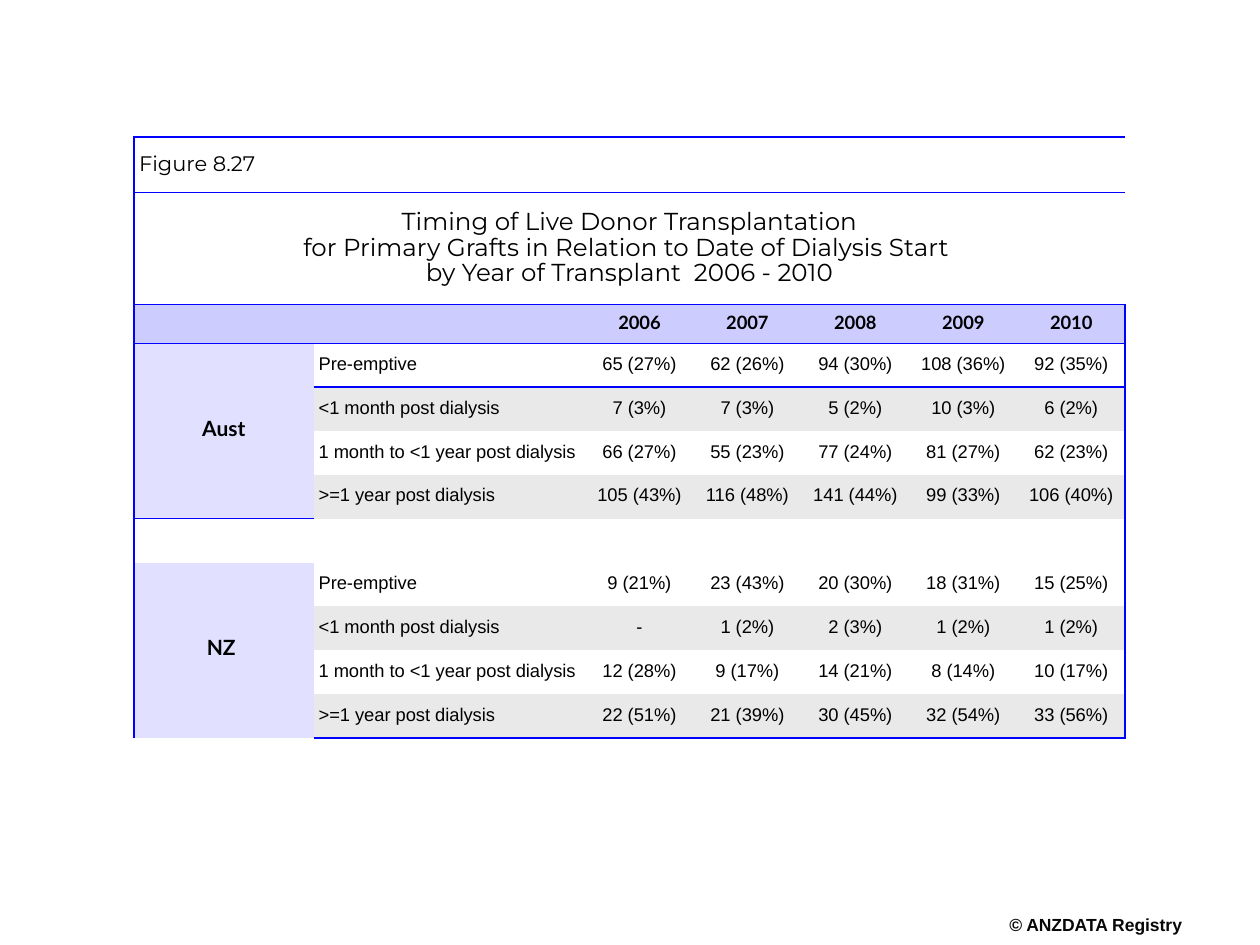
import pptx
import pptx.dml.color
import pptx.enum.text
import pptx.oxml.ns
import pptx.util
from lxml import etree

Pt = pptx.util.Pt
qn = pptx.oxml.ns.qn
LEFT = pptx.enum.text.PP_ALIGN.LEFT
CENTER = pptx.enum.text.PP_ALIGN.CENTER
MIDDLE = pptx.enum.text.MSO_ANCHOR.MIDDLE

BLUE, BLACK = "0000FF", "000000"
HEADER_FILL, REGION_FILL, BAND_FILL = "CCCCFF", "E1E1FF", "E9E9E9"
NO_STYLE = "{2D5ABB26-0587-4C30-8999-92F81FD0307C}"

FIGURE = "Figure 8.27"
TITLE = [
    "Timing of Live Donor Transplantation",
    "for Primary Grafts in Relation to Date of Dialysis Start ",
    "by Year of Transplant  2006 - 2010",
]
YEARS = ["2006", "2007", "2008", "2009", "2010"]
TIMINGS = [
    "Pre-emptive",
    "<1 month post dialysis",
    "1 month to <1 year post dialysis",
    ">=1 year post dialysis",
]
REGIONS = {
    "Aust": [
        ["65 (27%)", "62 (26%)", "94 (30%)", "108 (36%)", "92 (35%)"],
        ["7 (3%)", "7 (3%)", "5 (2%)", "10 (3%)", "6 (2%)"],
        ["66 (27%)", "55 (23%)", "77 (24%)", "81 (27%)", "62 (23%)"],
        ["105 (43%)", "116 (48%)", "141 (44%)", "99 (33%)", "106 (40%)"],
    ],
    "NZ ": [
        ["9 (21%)", "23 (43%)", "20 (30%)", "18 (31%)", "15 (25%)"],
        ["-", "1 (2%)", "2 (3%)", "1 (2%)", "1 (2%)"],
        ["12 (28%)", "9 (17%)", "14 (21%)", "8 (14%)", "10 (17%)"],
        ["22 (51%)", "21 (39%)", "30 (45%)", "32 (54%)", "33 (56%)"],
    ],
}

HEADER_ROW = 2
FIRST_REGION_ROW = 3
REGION_STEP = len(TIMINGS) + 1  # four timings and a gap row
COLUMN_WIDTHS = [102.6, 155.4] + [61.7] * len(YEARS)
ROW_HEIGHTS = [31.7, 64, 22.2] + [25.06] * (REGION_STEP * len(REGIONS) - 1)


def color(value):
    return pptx.dml.color.RGBColor.from_string(value)


def write(frame, lines, font, size, bold=False, align=CENTER, spacing=0.85,
          after=None, ink=BLACK):
    for index, line in enumerate(lines):
        para = frame.add_paragraph() if index else frame.paragraphs[0]
        para.alignment = align
        para.line_spacing = spacing
        if after is not None:
            para.space_after = Pt(after)
        span = para.add_run()
        span.text = line
        span.font.name = font
        span.font.size = Pt(size)
        span.font.bold = bold
        span.font.color.rgb = color(ink)


def fill_cell(cell, value):
    cell.fill.solid()
    cell.fill.fore_color.rgb = color(value)


def add_borders(cell, sides):
    properties = cell._tc.get_or_add_tcPr()
    for index, side in enumerate(sides):
        line = etree.Element(qn(f"a:ln{side}"), w=str(Pt(1)))
        solid = etree.SubElement(line, qn("a:solidFill"))
        etree.SubElement(solid, qn("a:srgbClr"), val=BLUE)
        properties.insert(index, line)


def frame_table(table):
    last_row, last_column = len(ROW_HEIGHTS) - 1, len(COLUMN_WIDTHS) - 1
    for row in range(last_row + 1):
        for column in range(last_column + 1):
            edges = {
                "L": column == 0,
                "R": column == last_column,
                "T": row <= FIRST_REGION_ROW,
                "B": row <= HEADER_ROW or row == last_row,
            }
            add_borders(table.cell(row, column), [side for side in edges if edges[side]])


def prepare_cells(table):
    for cell in table.iter_cells():
        cell.fill.background()
        cell.vertical_anchor = MIDDLE
        cell.margin_left = cell.margin_right = Pt(2.9)
        cell.margin_top = cell.margin_bottom = Pt(2.9)
        # Keep empty cells from stretching their rows
        etree.SubElement(cell.text_frame.paragraphs[0]._p, qn("a:endParaRPr"), sz="1050")


def fill_region(table, top, name, counts):
    region = table.cell(top, 0)
    region.merge(table.cell(top + len(TIMINGS) - 1, 0))
    fill_cell(region, REGION_FILL)
    write(region.text_frame, [name], "Lato", 12, bold=True, spacing=0.75)
    for offset, (timing, values) in enumerate(zip(TIMINGS, counts)):
        for column, text in enumerate([timing] + values, start=1):
            cell = table.cell(top + offset, column)
            if offset % 2:
                fill_cell(cell, BAND_FILL)
            write(cell.text_frame, [text], "Arial", 10.5,
                  align=LEFT if column == 1 else CENTER, after=14)


def add_timing_table(page, left, top):
    holder = page.shapes.add_table(
        len(ROW_HEIGHTS), len(COLUMN_WIDTHS), Pt(left), Pt(top),
        Pt(sum(COLUMN_WIDTHS)), Pt(sum(ROW_HEIGHTS)))
    table = holder.table
    table.first_row = table.horz_banding = False
    table._tbl.tblPr.find(qn("a:tableStyleId")).text = NO_STYLE
    for column, width in zip(table.columns, COLUMN_WIDTHS):
        column.width = Pt(width)
    for row, height in zip(table.rows, ROW_HEIGHTS):
        row.height = Pt(height)
    prepare_cells(table)

    # Figure number and title, each across the whole table
    for row, lines, size, align in [(0, [FIGURE], 12, LEFT), (1, TITLE, 14, CENTER)]:
        cell = table.cell(row, 0)
        cell.merge(table.cell(row, len(COLUMN_WIDTHS) - 1))
        write(cell.text_frame, lines, "Montserrat", size, align=align)

    # Year header
    for column, text in enumerate(["", ""] + YEARS):
        cell = table.cell(HEADER_ROW, column)
        fill_cell(cell, HEADER_FILL)
        if text:
            write(cell.text_frame, [text], "Lato", 10.5, bold=True)

    # Regions, with a gap row between them
    for index, (name, counts) in enumerate(REGIONS.items()):
        fill_region(table, FIRST_REGION_ROW + index * REGION_STEP, name, counts)
    frame_table(table)


def add_copyright(page, left, top, width, height):
    box = page.shapes.add_textbox(Pt(left), Pt(top), Pt(width), Pt(height))
    frame = box.text_frame
    frame.word_wrap = False
    frame.margin_left = frame.margin_right = 0
    frame.margin_top = frame.margin_bottom = 0
    write(frame, ["© ANZDATA Registry"], "Arial", 10, bold=True, ink="080808")


def main():
    deck = pptx.Presentation()
    deck.slide_width, deck.slide_height = Pt(720), Pt(540)
    page = deck.slides.add_slide(deck.slide_layouts[6])
    add_copyright(page, 575.3, 524, 101.5, 12.2)
    add_timing_table(page, 76.6, 78.3)
    deck.save("out.pptx")


if __name__ == "__main__":
    main()
